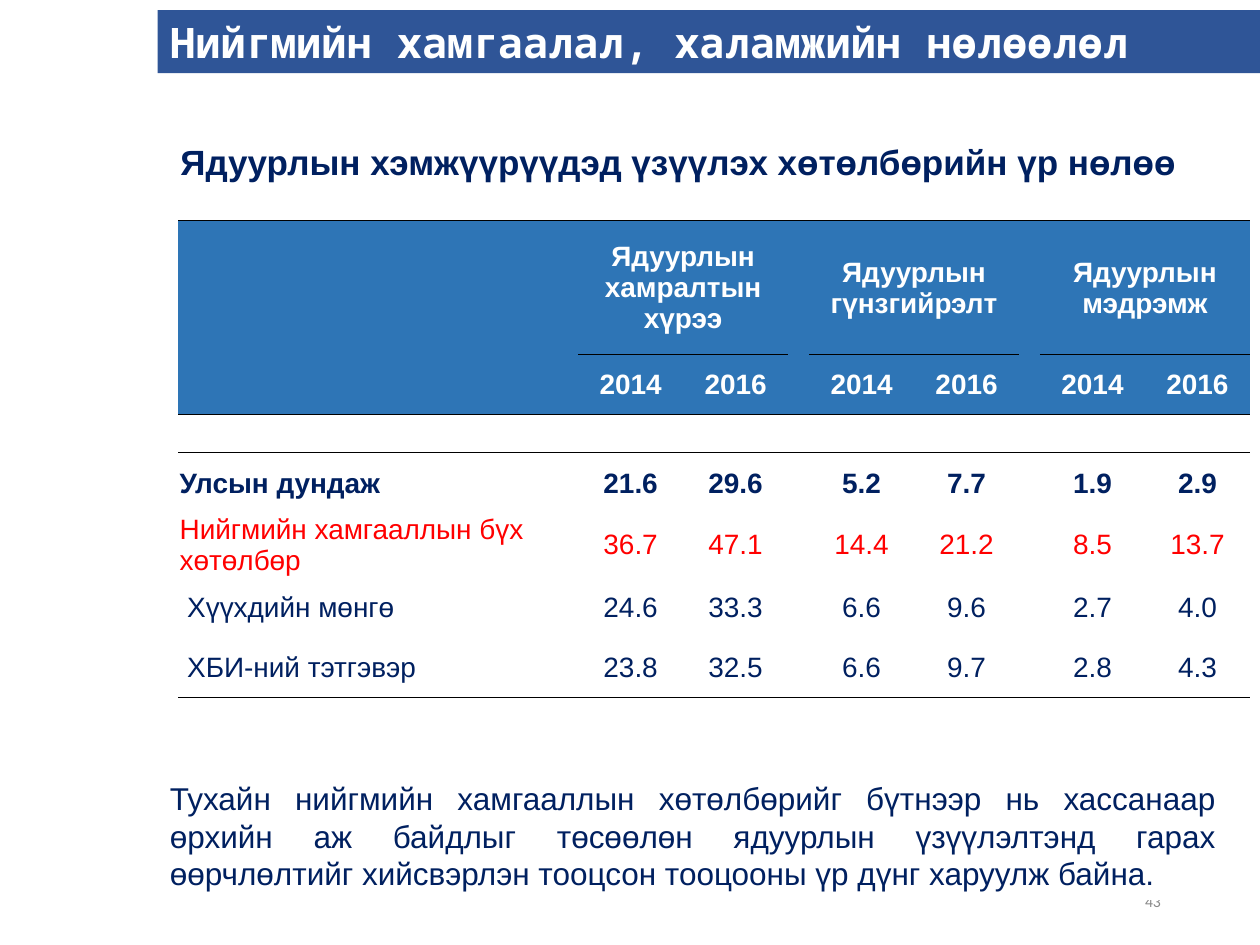
"""Build the slide on how social protection programmes affect poverty measures."""
from dataclasses import dataclass

from lxml.etree import SubElement
from pptx import Presentation
from pptx.dml.color import RGBColor
from pptx.enum.text import MSO_ANCHOR, MSO_AUTO_SIZE, PP_ALIGN
from pptx.oxml.ns import qn
from pptx.util import Pt


@dataclass(frozen=True)
class Theme:
    bar: str = "2F5597"
    header: str = "2E75B6"
    navy: str = "002060"
    red: str = "FF0000"
    white: str = "FFFFFF"
    grey: str = "898989"
    rule: str = "000000"
    body_font: str = "Arial"
    title_font: str = "Noto Sans Mono"
    number_font: str = "Calibri"
    title_size: int = 24
    subtitle_size: int = 20
    note_size: int = 18
    table_size: int = 16
    number_size: int = 9


THEME = Theme()
TITLE = "Нийгмийн хамгаалал, халамжийн нөлөөлөл"
SUBTITLE = "Ядуурлын хэмжүүрүүдэд үзүүлэх хөтөлбөрийн үр нөлөө"
NOTE = (
    "Тухайн нийгмийн хамгааллын хөтөлбөрийг бүтнээр нь хассанаар "
    "өрхийн аж байдлыг төсөөлөн ядуурлын үзүүлэлтэнд гарах "
    "өөрчлөлтийг хийсвэрлэн тооцсон тооцооны үр дүнг харуулж байна."
)
SLIDE_NUMBER = "43"
MEASURES = ["Ядуурлын хамралтын хүрээ", "Ядуурлын гүнзгийрэлт", "Ядуурлын мэдрэмж"]
YEARS = ["2014", "2016"]
PROGRAMMES = [
    ("Улсын дундаж", ["21.6", "29.6", "5.2", "7.7", "1.9", "2.9"]),
    ("Нийгмийн хамгааллын бүх хөтөлбөр", ["36.7", "47.1", "14.4", "21.2", "8.5", "13.7"]),
    ("Хүүхдийн мөнгө", ["24.6", "33.3", "6.6", "9.6", "2.7", "4.0"]),
    ("ХБИ-ний тэтгэвэр", ["23.8", "32.5", "6.6", "9.7", "2.8", "4.3"]),
]
ROW_STYLES = [(THEME.navy, True), (THEME.red, False), (THEME.navy, False), (THEME.navy, False)]
INDENTED_ROWS = (5, 6)
HEADER_ROWS = 2
COLUMN_WIDTHS = [228.4] + [60, 60, 12] * 2 + [60, 60]
ROW_HEIGHTS = [76.5, 34.5, 21.6] + [34.6] * 4
PLAIN_TABLE_STYLE = "{2D5ABB26-0587-4C30-8999-92F81FD0307C}"


def format_paragraph(paragraph, size, color, bold=False, font=THEME.body_font, align=PP_ALIGN.LEFT):
    paragraph.alignment = align
    paragraph.font.name = font
    paragraph.font.size = Pt(size)
    paragraph.font.bold = bold
    paragraph.font.color.rgb = RGBColor.from_string(color)


def fill_text(shape, text, anchor=MSO_ANCHOR.TOP, **style):
    frame = shape.text_frame
    frame.word_wrap = True
    frame.auto_size = MSO_AUTO_SIZE.NONE
    frame.vertical_anchor = anchor
    frame.text = text
    format_paragraph(frame.paragraphs[0], **style)


def fill_shape(shape, color):
    shape.fill.solid()
    shape.fill.fore_color.rgb = RGBColor.from_string(color)


def add_text(slide, box, text, **style):
    shape = slide.shapes.add_textbox(*map(Pt, box))
    fill_text(shape, text, **style)
    return shape


def add_title(slide):
    title = slide.shapes.title
    title.left, title.top, title.width, title.height = map(Pt, (90, 5.8, 630, 36))
    fill_shape(title, THEME.bar)
    fill_text(title, TITLE, size=THEME.title_size, color=THEME.white, bold=True, font=THEME.title_font)


def add_rule(cell, edge):
    line = SubElement(cell._tc.get_or_add_tcPr(), qn(f"a:{edge}"), w=str(Pt(0.5)))
    SubElement(SubElement(line, qn("a:solidFill")), qn("a:srgbClr"), val=THEME.rule)


def spread(label, values):
    """Place value pairs after the label with a spacer column between pairs."""
    line = [label]
    for start in range(0, len(values), 2):
        line += values[start:start + 2] + [""]
    return line[:-1]


def table_lines():
    headings = [text for measure in MEASURES for text in (measure, "")]
    lines = [spread("", headings), spread("", YEARS * len(MEASURES)), [""] * len(COLUMN_WIDTHS)]
    return lines + [spread(*programme) for programme in PROGRAMMES]


def format_cell(cell, text, row, column):
    last_row = len(ROW_HEIGHTS) - 1
    is_header = row < HEADER_ROWS
    if row <= HEADER_ROWS:
        add_rule(cell, "lnT")
    if is_header or row == last_row:
        add_rule(cell, "lnB")
    if is_header:
        fill_shape(cell, THEME.header)
    else:
        cell.fill.background()
    cell.margin_left = Pt(5 if column == 0 and row in INDENTED_ROWS else 0.7)
    cell.margin_right = cell.margin_top = Pt(0.7)
    cell.margin_bottom = Pt(0)
    cell.vertical_anchor = MSO_ANCHOR.MIDDLE
    if text:
        cell.text = text
    color, bold = (THEME.white, True) if row <= HEADER_ROWS else ROW_STYLES[row - HEADER_ROWS - 1]
    align = PP_ALIGN.CENTER if column else PP_ALIGN.LEFT
    format_paragraph(cell.text_frame.paragraphs[0], THEME.table_size, color, bold, align=align)


def add_poverty_table(slide):
    box = map(Pt, (102, 126, sum(COLUMN_WIDTHS), sum(ROW_HEIGHTS)))
    table = slide.shapes.add_table(len(ROW_HEIGHTS), len(COLUMN_WIDTHS), *box).table
    table.first_row = table.horz_banding = False
    table._tbl.tblPr.find(qn("a:tableStyleId")).text = PLAIN_TABLE_STYLE
    for column, width in zip(table.columns, COLUMN_WIDTHS):
        column.width = Pt(width)
    for row, height in zip(table.rows, ROW_HEIGHTS):
        row.height = Pt(height)
    for row, line in enumerate(table_lines()):
        for column, text in enumerate(line):
            format_cell(table.cell(row, column), text, row, column)
    for start in range(0, len(COLUMN_WIDTHS), 3):
        table.cell(0, start).merge(table.cell(1, start))
        table.cell(0, start + 1).merge(table.cell(0, start + 2))


def main():
    presentation = Presentation()
    presentation.slide_width, presentation.slide_height = Pt(720), Pt(540)
    slide = presentation.slides.add_slide(presentation.slide_layouts[5])
    add_title(slide)
    add_text(slide, (508.5, 500.5, 162, 28.75), SLIDE_NUMBER, anchor=MSO_ANCHOR.MIDDLE,
             size=THEME.number_size, color=THEME.grey, font=THEME.number_font, align=PP_ALIGN.RIGHT)
    note = add_text(slide, (90, 441.5, 612, 72.7), NOTE,
                    size=THEME.note_size, color=THEME.navy, align=PP_ALIGN.JUSTIFY)
    fill_shape(note, THEME.white)
    add_text(slide, (96, 76.5, 618, 31.5), SUBTITLE,
             size=THEME.subtitle_size, color=THEME.navy, bold=True)
    add_poverty_table(slide)
    presentation.save("out.pptx")


if __name__ == "__main__":
    main()
